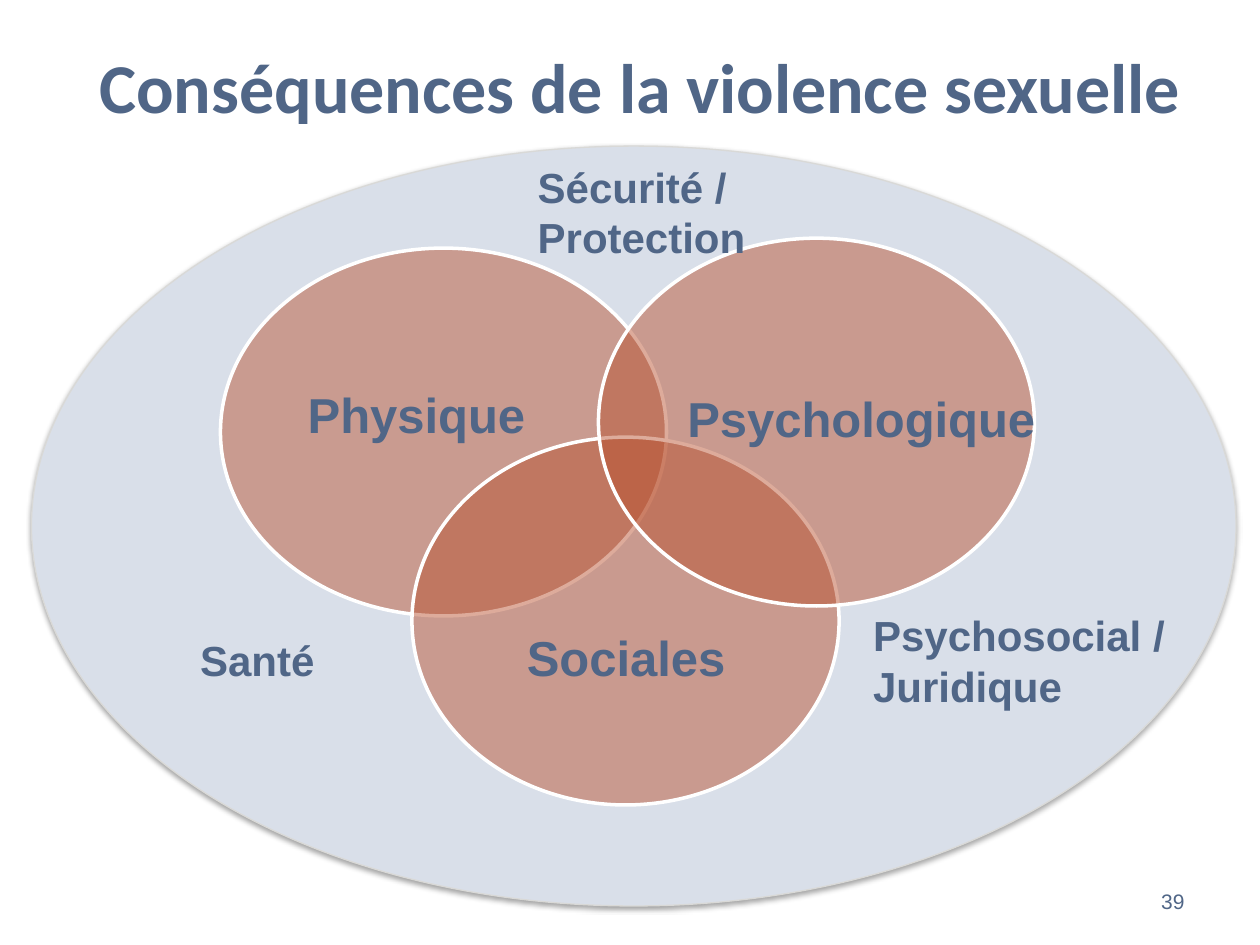
from dataclasses import dataclass

from lxml.etree import SubElement
from pptx import Presentation
from pptx.dml.color import RGBColor
from pptx.enum.shapes import MSO_SHAPE
from pptx.enum.text import MSO_ANCHOR as Anchor, PP_ALIGN as Align
from pptx.oxml.ns import qn
from pptx.shapes.autoshape import Shape
from pptx.slide import Slide
from pptx.util import Pt

SLATE = RGBColor(0x50, 0x66, 0x87)
PALE_BLUE = RGBColor(0xD9, 0xDF, 0xE9)
PALE_GREY = RGBColor(0xD9, 0xD9, 0xD7)
BRICK = RGBColor(0xB8, 0x52, 0x31)
RUST = RGBColor(0xB8, 0x50, 0x2E)
WHITE = RGBColor(0xFF, 0xFF, 0xFF)


@dataclass(frozen=True)
class Box:
    left: float
    top: float
    width: float
    height: float

    def lengths(self) -> tuple[Pt, Pt, Pt, Pt]:
        return Pt(self.left), Pt(self.top), Pt(self.width), Pt(self.height)


@dataclass(frozen=True)
class Label:
    text: str
    box: Box
    size: float = 24
    bold: bool = True
    font: str = "Arial"
    align: Align = Align.LEFT
    anchor: Anchor = Anchor.TOP
    spacing: float = 1.0
    inset: tuple[float, float] = (7.2, 3.6)


@dataclass(frozen=True)
class VennCircle:
    text: str
    circle: Box
    text_box: Box
    color: RGBColor


TITLE = Label(
    "Conséquences de la violence sexuelle", Box(49.7, 22.3, 634.3, 59.8),
    size=40, font="Calibri", anchor=Anchor.MIDDLE, spacing=0.9,
)
SURROUNDING = Box(18, 83.5, 688.3, 434.2)
VENN_CIRCLES = [
    VennCircle("Physique", Box(126, 141.8, 254.9, 210.2),
               Box(165.6, 164.2, 144.7, 148.3), BRICK),
    VennCircle("Sociales", Box(235.4, 249.8, 244.1, 210.2),
               Box(271.4, 330.5, 172.8, 93.6), RUST),
    VennCircle("Psychologique", Box(342, 136.1, 249.1, 210.2),
               Box(376.6, 167, 231.1, 148.3), RUST),
]
RESPONSES = [
    Label("Psychosocial /\nJuridique", Box(491.8, 344.9, 188.6, 64.8)),
    Label("Sécurité /\nProtection", Box(300.2, 88.6, 182.2, 64.8)),
    Label("Santé", Box(107.3, 359.3, 182.2, 36)),
]
PAGE_NUMBER = Label(
    "39", Box(516.2, 500.4, 167.8, 28.8),
    size=12, bold=False, align=Align.RIGHT, anchor=Anchor.MIDDLE,
)


def add_label(slide: Slide, label: Label) -> None:
    text_frame = slide.shapes.add_textbox(*label.box.lengths()).text_frame
    text_frame.word_wrap = True
    text_frame.vertical_anchor = label.anchor
    horizontal, vertical = label.inset
    text_frame.margin_left = text_frame.margin_right = Pt(horizontal)
    text_frame.margin_top = text_frame.margin_bottom = Pt(vertical)
    text_frame.text = label.text
    for paragraph in text_frame.paragraphs:
        paragraph.alignment = label.align
        paragraph.line_spacing = label.spacing
        for run in paragraph.runs:
            run.font.name = label.font
            run.font.size = Pt(label.size)
            run.font.bold = label.bold
            run.font.color.rgb = SLATE


def add_ellipse(slide: Slide, box: Box, fill: RGBColor,
                line: RGBColor, line_width: float) -> Shape:
    shape = slide.shapes.add_shape(MSO_SHAPE.OVAL, *box.lengths())
    shape.shadow.inherit = False
    shape.fill.solid()
    shape.fill.fore_color.rgb = fill
    shape.line.color.rgb = line
    shape.line.width = Pt(line_width)
    return shape


def set_opacity(shape: Shape, percent: int) -> None:
    color = shape.fill._xPr.find(qn("a:solidFill")).find(qn("a:srgbClr"))
    SubElement(color, qn("a:alpha"), val=str(percent * 1000))


def add_soft_shadow(shape: Shape) -> None:
    effects = shape.element.spPr.find(qn("a:effectLst"))
    shadow = SubElement(
        effects, qn("a:outerShdw"), blurRad=str(Pt(3.1)), dist=str(Pt(1.6)),
        dir=str(90 * 60000), rotWithShape="0",
    )
    color = SubElement(shadow, qn("a:srgbClr"), val="000000")
    SubElement(color, qn("a:alpha"), val="36000")


def add_venn_circle(slide: Slide, venn: VennCircle) -> None:
    set_opacity(add_ellipse(slide, venn.circle, venn.color, WHITE, 2), 48)
    add_label(slide, Label(
        venn.text, venn.text_box, size=28, align=Align.CENTER,
        anchor=Anchor.MIDDLE, spacing=0.9, inset=(8.64, 8.64),
    ))


def main() -> None:
    presentation = Presentation()
    presentation.slide_width = Pt(720)
    presentation.slide_height = Pt(540)
    slide = presentation.slides.add_slide(presentation.slide_layouts[6])

    add_label(slide, TITLE)
    add_soft_shadow(add_ellipse(slide, SURROUNDING, PALE_BLUE, PALE_GREY, 0.75))
    for venn in VENN_CIRCLES:
        add_venn_circle(slide, venn)
    for label in [*RESPONSES, PAGE_NUMBER]:
        add_label(slide, label)

    presentation.save("out.pptx")


if __name__ == "__main__":
    main()
